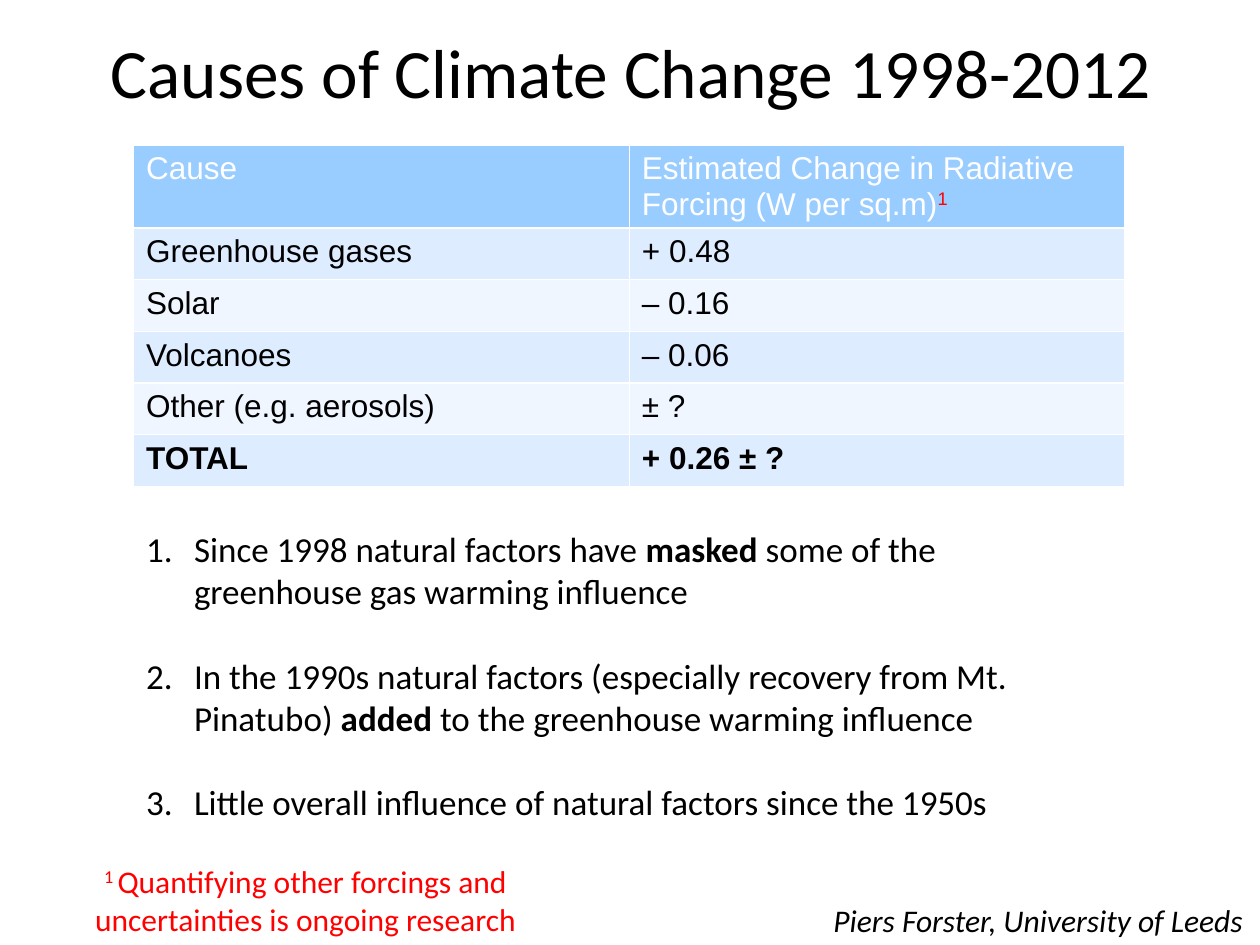
import pptx
import pptx.util
import pptx.dml.color
import pptx.enum.text
import pptx.oxml
import pptx.oxml.ns
from lxml import etree

Inches = pptx.util.Inches
Pt = pptx.util.Pt
RGB = pptx.dml.color.RGBColor
Align = pptx.enum.text.PP_ALIGN
Anchor = pptx.enum.text.MSO_ANCHOR
Fit = pptx.enum.text.MSO_AUTO_SIZE
qn = pptx.oxml.ns.qn

BLACK = RGB(0x00, 0x00, 0x00)
WHITE = RGB(0xFF, 0xFF, 0xFF)
RED = RGB(0xFF, 0x00, 0x00)
HEAD = RGB(0x99, 0xCC, 0xFF)
BANDS = (RGB(0xDE, 0xEC, 0xFF), RGB(0xEF, 0xF6, 0xFF))

ROWS = [
    ("Cause", "Estimated Change in Radiative Forcing (W per sq.m)"),
    ("Greenhouse gases", "+ 0.48"),
    ("Solar", "– 0.16"),
    ("Volcanoes", "‒ 0.06"),
    ("Other (e.g. aerosols)", "± ?"),
    ("TOTAL", "+ 0.26 ± ?"),
]
# Each point is a list of (text, bold) runs
POINTS = [
    [("Since 1998 natural factors have ", False), ("masked ", True),
     ("some of the greenhouse gas warming influence", False)],
    [("In the 1990s natural factors (especially recovery from Mt. Pinatubo) ", False),
     ("added", True), (" to the greenhouse warming influence", False)],
    [("Little overall influence of natural factors since the 1950s", False)],
]


def place(shape, box):
    shape.left, shape.top, shape.width, shape.height = map(Inches, box)


def add_run(para, text, size, color=BLACK, face="Calibri", bold=False,
            italic=False, raised=False):
    run = para.add_run()
    run.text = text
    font = run.font
    font.name, font.size, font.bold, font.italic = face, Pt(size), bold, italic
    font.color.rgb = color
    if raised:
        font._element.set("baseline", "30000")


def add_title(slide, box):
    title = slide.shapes.title
    place(title, box)
    frame = title.text_frame
    frame.auto_size = Fit.NONE
    frame.vertical_anchor = Anchor.MIDDLE
    para = frame.paragraphs[0]
    para.alignment = Align.CENTER
    add_run(para, "Causes of Climate Change 1998-2012", 39.6)


def set_edges(cell, base):
    props = cell._tc.get_or_add_tcPr()
    for side, width in (("lnL", 1), ("lnR", 1), ("lnT", 1), ("lnB", base)):
        line = etree.SubElement(props, qn("a:" + side), w=str(Pt(width)))
        fill = etree.SubElement(line, qn("a:solidFill"))
        etree.SubElement(fill, qn("a:srgbClr"), val=str(WHITE))


def add_causes(slide, box):
    table = slide.shapes.add_table(len(ROWS), 2, *map(Inches, box)).table
    low = 0.41
    for col in table.columns:
        col.width = Inches(box[2] / 2)
    for i, texts in enumerate(ROWS):
        head, total = i == 0, i == len(ROWS) - 1
        table.rows[i].height = Inches(box[3] - low * (len(ROWS) - 1) if head else low)
        for j, text in enumerate(texts):
            cell = table.cell(i, j)
            set_edges(cell, 1.5 if head else 1)
            cell.fill.solid()
            cell.fill.fore_color.rgb = HEAD if head else BANDS[(i - 1) % 2]
            para = cell.text_frame.paragraphs[0]
            para.alignment = Align.LEFT
            add_run(para, text, 18, WHITE if head else BLACK, "Arial", bold=total)
    # Footnote mark in the heading
    mark = table.cell(0, 1).text_frame.paragraphs[0]
    add_run(mark, "1", 18, RED, "Arial", raised=True)


def add_points(slide, box):
    body = slide.placeholders[1]
    place(body, box)
    frame = body.text_frame
    frame.word_wrap = True
    frame.auto_size = Fit.NONE
    frame.vertical_anchor = Anchor.TOP
    for i, runs in enumerate(POINTS):
        para = frame.add_paragraph() if i else frame.paragraphs[0]
        props = para._p.get_or_add_pPr()
        props.set("marL", str(Inches(0.38)))
        props.set("indent", str(-Inches(0.38)))
        etree.SubElement(props, qn("a:buFont"), typeface="+mj-lt")
        etree.SubElement(props, qn("a:buAutoNum"), type="arabicPeriod")
        para.alignment = Align.LEFT
        para.space_before = Pt(24 if i else 0)
        for text, bold in runs:
            add_run(para, text, 20, bold=bold)


def add_label(slide, box, lines, wrap=True):
    label = slide.shapes.add_textbox(*map(Inches, box))
    frame = label.text_frame
    frame.word_wrap = wrap
    for i, runs in enumerate(lines):
        para = frame.add_paragraph() if i else frame.paragraphs[0]
        para.alignment = Align.CENTER
        for text, style in runs:
            add_run(para, text, 18, **style)


def main():
    deck = pptx.Presentation()
    deck.slide_width, deck.slide_height = Inches(10), Inches(7.5)
    slide = deck.slides.add_slide(deck.slide_layouts[1])
    add_title(slide, (0.51, 0.13, 9, 0.87))
    add_causes(slide, (1.06, 1.15, 7.87, 2.7))
    add_points(slide, (1.06, 4.14, 7.56, 2.46))
    # Credit and footnote
    add_label(slide, (6.48, 7.1, 3.52, 0.4),
              [[("Piers Forster, University of Leeds", {"italic": True})]], wrap=False)
    add_label(slide, (0.12, 6.79, 4.61, 0.71), [
        [("1 ", {"color": RED, "raised": True}),
         ("Quantifying other forcings and", {"color": RED})],
        [("uncertainties is ongoing research", {"color": RED})],
    ])
    deck.save("out.pptx")


if __name__ == "__main__":
    main()
